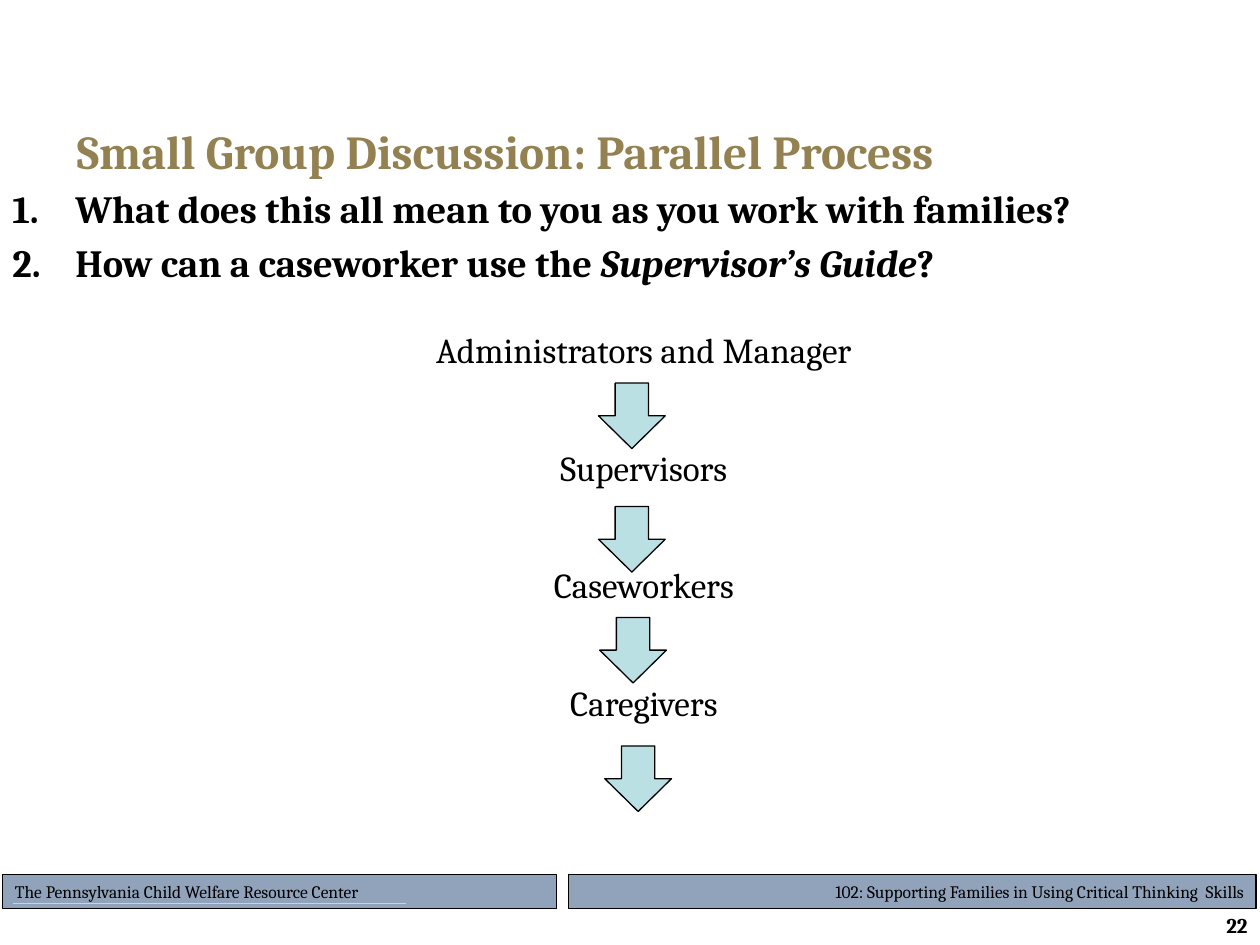
from lxml import etree
from pptx import Presentation
from pptx.dml.color import RGBColor
from pptx.enum.shapes import MSO_CONNECTOR, MSO_SHAPE
from pptx.enum.text import MSO_ANCHOR, MSO_AUTO_SIZE, PP_ALIGN
from pptx.oxml.ns import qn
from pptx.util import Inches, Pt

LEFT, CENTER, RIGHT = PP_ALIGN.LEFT, PP_ALIGN.CENTER, PP_ALIGN.RIGHT
TOP, MIDDLE = MSO_ANCHOR.TOP, MSO_ANCHOR.MIDDLE
RECT, ARROW = MSO_SHAPE.RECTANGLE, MSO_SHAPE.DOWN_ARROW
STRAIGHT = MSO_CONNECTOR.STRAIGHT
FONT = "Cambria"
WIDE, HIGH = 10, 7.5
COLS, ROWS = 100, 75
BLACK, GOLD, SLATE, AQUA, SAND = "000000", "948151", "91A3BB", "BBE0E3", "E5D199"

ASKS = [
    [("What does this all mean to you as you work with families?", False)],
    [("How can a caseworker use the ", False), ("Supervisor’s Guide", True), ("?", False)],
]
ROLES = ["Administrators and Manager", "Supervisors", "Caseworkers", "Caregivers"]
DROPS = [(47.5, 30.4), (47.5, 40.2), (47.6, 49), (48, 59.2)]
BARS = [
    ((45.1, 69.4, 54.6, 2.7), 0.75, RIGHT,
     "102: Supporting Families in Using Critical Thinking  Skills"),
    ((0.2, 69.4, 44, 2.7), 0.5, LEFT,
     "The Pennsylvania Child Welfare Resource Center"),
]


def color(code):
    return RGBColor.from_string(code)


def area(col, row, cols, rows):
    x, y = WIDE / COLS, HIGH / ROWS
    return [Inches(n) for n in (col * x, row * y, cols * x, rows * y)]


def style(par, size, tone=BLACK, bold=False, align=LEFT):
    par.alignment = align
    for run in par.runs:
        run.font.name = FONT
        run.font.size = Pt(size)
        run.font.bold = bold
        run.font.color.rgb = color(tone)


def frame(shape, anchor):
    text = shape.text_frame
    text.word_wrap = True
    text.auto_size = MSO_AUTO_SIZE.NONE
    text.vertical_anchor = anchor
    return text


def box(slide, cell, anchor=TOP):
    return frame(slide.shapes.add_textbox(*area(*cell)), anchor)


def block(slide, kind, cell, fill, width):
    shape = slide.shapes.add_shape(kind, *area(*cell))
    shape.shadow.inherit = False
    shape.fill.solid()
    shape.fill.fore_color.rgb = color(fill)
    shape.line.color.rgb = color(BLACK)
    shape.line.width = Pt(width)
    return shape


def bar(slide, cell, width, align, words):
    text = frame(block(slide, RECT, cell, SLATE, width), MIDDLE)
    text.text = words
    style(text.paragraphs[0], 10, align=align)


def rule(slide, col, row, cols):
    x, y, w, _ = area(col, row, cols, 0)
    line = slide.shapes.add_connector(STRAIGHT, x, y, x + w, y)
    line.line.color.rgb = color(SAND)
    line.line.width = Pt(0.75)
    etree.SubElement(line._element.spPr, qn("a:effectLst"))


def title(slide, cell, words):
    head = slide.shapes.title
    head.left, head.top, head.width, head.height = area(*cell)
    text = frame(head, MIDDLE)
    text.text = words
    style(text.paragraphs[0], 27, GOLD, True)


def number(par):
    props = par._p.get_or_add_pPr()
    props.set("marL", str(Inches(0.5)))
    props.set("indent", str(Inches(-0.5)))
    etree.SubElement(props, qn("a:buFont")).set("typeface", "+mj-lt")
    etree.SubElement(props, qn("a:buAutoNum")).set("type", "arabicPeriod")


def asks(slide, cell):
    text = box(slide, cell)
    for i, parts in enumerate(ASKS):
        par = text.add_paragraph() if i else text.paragraphs[0]
        number(par)
        for words, slant in parts:
            run = par.add_run()
            run.text = words
            run.font.italic = slant
        style(par, 22, bold=True)
        if i:
            par.space_before = Pt(4.4)


def roles(slide, cell):
    text = box(slide, cell)
    text.text = "\n".join(ROLES)
    for i, par in enumerate(text.paragraphs):
        style(par, 20, align=CENTER)
        if i:
            par.space_before = Pt(43.2)


def page(slide, cell, words):
    text = box(slide, cell, MIDDLE)
    text.text = words
    style(text.paragraphs[0], 12, bold=True, align=RIGHT)


def main():
    deck = Presentation()
    deck.slide_width, deck.slide_height = Inches(WIDE), Inches(HIGH)
    slide = deck.slides.add_slide(deck.slide_layouts[5])
    for item in BARS:
        bar(slide, *item)
    rule(slide, 1, 71.7, 31.2)
    title(slide, (5.1, 8.7, 90, 6.5), "Small Group Discussion: Parallel Process")
    asks(slide, (0, 14.2, 100, 54.9))
    page(slide, (88.9, 72.4, 11.1, 2.1), "22")
    roles(slide, (9, 25.6, 84.2, 41.8))
    for col, row in DROPS:
        block(slide, ARROW, (col, row, 5.3, 5.2), AQUA, 0.75)
    deck.save("out.pptx")


if __name__ == "__main__":
    main()
